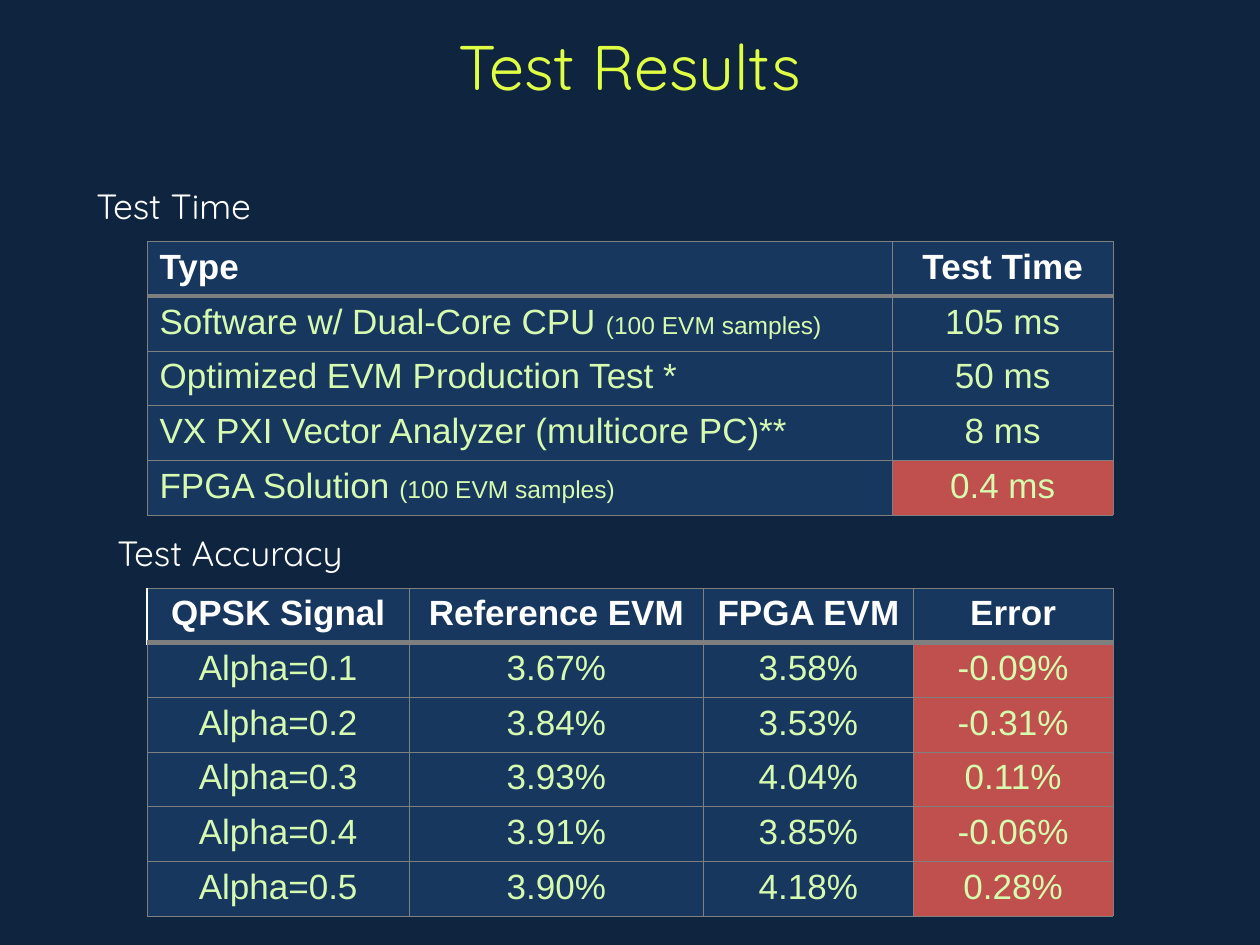
from dataclasses import dataclass

import pptx
import pptx.dml.color
import pptx.enum.text
import pptx.oxml
import pptx.oxml.ns
import pptx.util

Pt = pptx.util.Pt
ALIGN = pptx.enum.text.PP_ALIGN


@dataclass(frozen=True)
class Theme:
    background: str = "0F243E"
    title: str = "DFFF44"
    heading: str = "FFFFFF"
    body: str = "D6FBB0"
    cell: str = "17375E"
    highlight: str = "C0504D"
    border: str = "7F7F7F"
    display_font: str = "Quicksand"
    table_font: str = "Arial"
    title_size: int = 36
    text_size: int = 20
    note_size: int = 14
    thin: float = 0.25
    thick: float = 3


THEME = Theme()
ROW_HEIGHT = 29.6

TIME_ROWS = [
    ["Type", "Test Time"],
    [("Software w/ Dual-Core CPU ", "(100 EVM samples)"), "105 ms"],
    ["Optimized EVM Production Test *", "50 ms"],
    ["VX PXI Vector Analyzer (multicore PC)**", "8 ms"],
    [("FPGA Solution ", "(100 EVM samples)"), "0.4 ms"],
]
ACCURACY_ROWS = [
    ["QPSK Signal", "Reference EVM", "FPGA EVM", "Error"],
    ["Alpha=0.1", "3.67%", "3.58%", "-0.09%"],
    ["Alpha=0.2", "3.84%", "3.53%", "-0.31%"],
    ["Alpha=0.3", "3.93%", "4.04%", "0.11%"],
    ["Alpha=0.4", "3.91%", "3.85%", "-0.06%"],
    ["Alpha=0.5", "3.90%", "4.18%", "0.28%"],
]


def rgb(color):
    return pptx.dml.color.RGBColor.from_string(color)


def set_font(font, name, size, color, bold=False):
    font.name, font.size, font.bold = name, Pt(size), bold
    font.color.rgb = rgb(color)


def add_label(s, box, text, size, color, align=ALIGN.LEFT):
    tf = s.shapes.add_textbox(*map(Pt, box)).text_frame
    tf.word_wrap = True
    p = tf.paragraphs[0]
    p.text, p.alignment = text, align
    set_font(p.font, THEME.display_font, size, color)


def set_border(cell, side, color, width):
    """Draw one side (L, R, T or B); call in that order and before the fill."""
    cell._tc.get_or_add_tcPr().append(pptx.oxml.parse_xml(
        f'<a:ln{side} {pptx.oxml.ns.nsdecls("a")} w="{Pt(width)}">'
        f'<a:solidFill><a:srgbClr val="{color}"/></a:solidFill></a:ln{side}>'))


def fill_cell(cell, content, header, align, fill, borders):
    for side in "LRTB":
        set_border(cell, side, *borders.get(side, (THEME.border, THEME.thin)))
    cell.fill.solid()
    cell.fill.fore_color.rgb = rgb(fill)
    p = cell.text_frame.paragraphs[0]
    p.alignment = align
    set_font(p.font, THEME.table_font, THEME.text_size,
             THEME.heading if header else THEME.body, header)
    main, *notes = [content] if isinstance(content, str) else content
    p.add_run().text = main
    for note in notes:
        r = p.add_run()
        r.text = note
        r.font.size = Pt(THEME.note_size)


def add_results_table(s, left, top, widths, rows, highlights,
                      left_columns=(), header_edge=None):
    """Place a table; highlights holds the (row, column) cells to mark."""
    table = s.shapes.add_table(
        len(rows), len(widths), Pt(left), Pt(top),
        Pt(sum(widths)), Pt(ROW_HEIGHT * len(rows))).table
    table.horz_banding = False
    for column, width in zip(table.columns, widths):
        column.width = Pt(width)
    rule = (THEME.border, THEME.thick)
    for i, row in enumerate(rows):
        table.rows[i].height = Pt(ROW_HEIGHT)
        for j, content in enumerate(row):
            borders = {0: {"B": rule}, 1: {"T": rule}}.get(i, {})
            if header_edge and (i, j) == (0, 0):
                borders["L"] = header_edge
            fill_cell(table.cell(i, j), content, i == 0,
                      ALIGN.LEFT if j in left_columns else ALIGN.CENTER,
                      THEME.highlight if (i, j) in highlights else THEME.cell,
                      borders)


def build_slide(prs):
    s = prs.slides.add_slide(prs.slide_layouts[6])
    s.background.fill.solid()
    s.background.fill.fore_color.rgb = rgb(THEME.background)
    add_label(s, (48, 12, 624, 62), "Test Results",
              THEME.title_size, THEME.title, ALIGN.CENTER)
    add_label(s, (48, 102, 252, 36), "Test Time", THEME.text_size, THEME.heading)
    add_results_table(s, 84, 138, (426, 126), TIME_ROWS, {(4, 1)},
                      left_columns=(0,))
    add_label(s, (60, 300, 252, 36), "Test Accuracy",
              THEME.text_size, THEME.heading)
    add_results_table(s, 84, 336, (150, 168, 120, 114), ACCURACY_ROWS,
                      {(i, 3) for i in range(1, len(ACCURACY_ROWS))},
                      header_edge=(THEME.heading, 1))


def main():
    prs = pptx.Presentation()
    prs.slide_width, prs.slide_height = Pt(720), Pt(540)
    build_slide(prs)
    prs.save("out.pptx")


if __name__ == "__main__":
    main()
